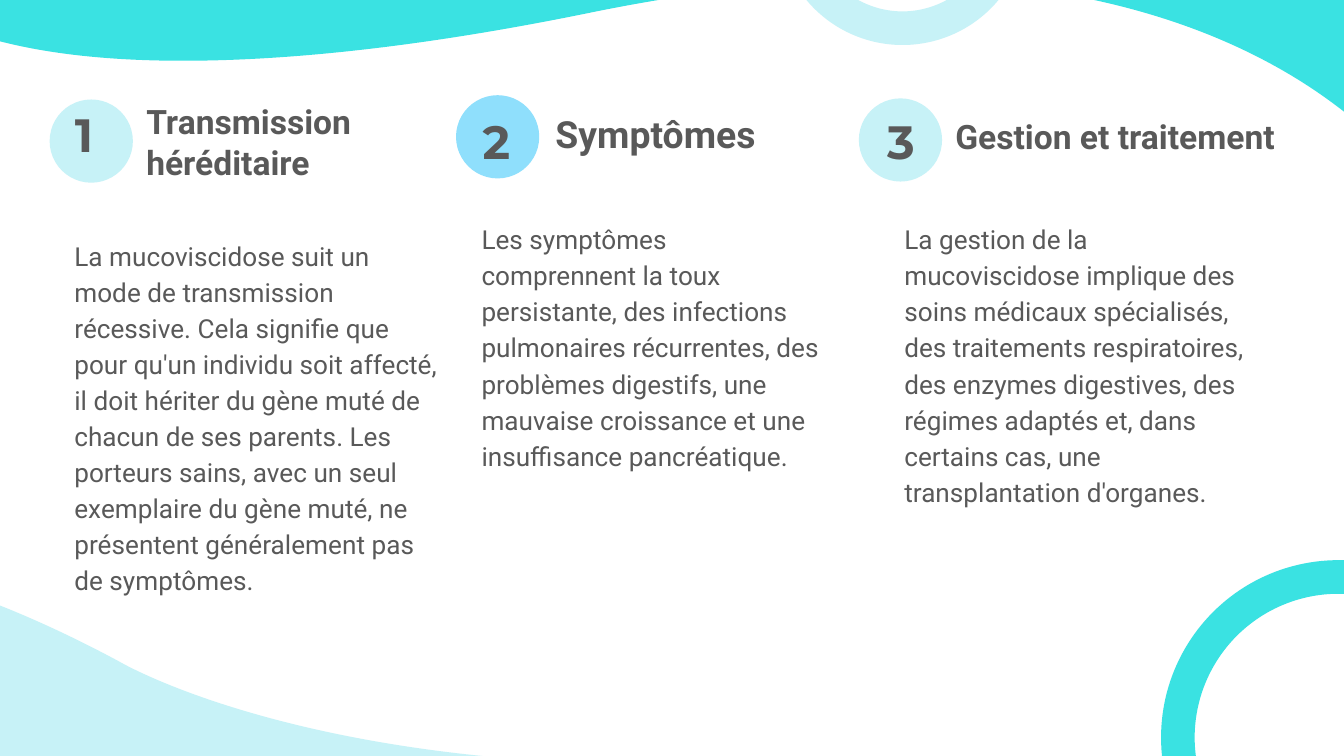
from lxml import etree
from pptx import Presentation
from pptx import util as u
from pptx.dml.color import RGBColor
from pptx.enum import shapes, text
from pptx.oxml.ns import qn

CYAN, PALE, BLUE, GRAY = "3AE2E2", "C7F2F7", "8FDFFC", "595959"


def color(value):
    return RGBColor.from_string(value)


class SlideBuilder:
    def __init__(self, slide):
        self.slide = slide

    def wave(self, start, segments, fill):
        outline = [(u.Pt(x), u.Pt(y)) for segment in segments for x, y in segment]
        builder = self.slide.shapes.build_freeform(u.Pt(start[0]), u.Pt(start[1]), scale=1.0)
        builder.add_line_segments(outline, close=True)
        shape = builder.convert_to_shape()
        lines = iter(list(shape.element.iter(qn("a:lnTo"))))
        for segment in segments:
            steps = [next(lines) for _ in segment]
            if len(steps) == 3:
                bezier = etree.Element(qn("a:cubicBezTo"))
                steps[0].addprevious(bezier)
                for step in steps:
                    bezier.append(step[0])
                    step.getparent().remove(step)
        shape.shadow.inherit = False
        shape.fill.solid()
        shape.fill.fore_color.rgb = color(fill)
        shape.line.fill.background()

    def circle(self, left, top, size, fill=None, line=None):
        shape = self.slide.shapes.add_shape(
            shapes.MSO_SHAPE.OVAL, u.Pt(left), u.Pt(top), u.Pt(size), u.Pt(size))
        shape.shadow.inherit = False
        if fill:
            shape.fill.solid()
            shape.fill.fore_color.rgb = color(fill)
        else:
            shape.fill.background()
        if line:
            shape.line.color.rgb = color(line)
            shape.line.width = u.Pt(18)
        else:
            shape.line.fill.background()

    def label(self, box, content, size, font="Roboto", bold=False, spacing=1.0):
        shape = self.slide.shapes.add_textbox(*(u.Pt(length) for length in box))
        frame = shape.text_frame
        frame.word_wrap = True
        frame.vertical_anchor = text.MSO_ANCHOR.TOP
        frame.margin_left = frame.margin_right = u.Pt(7.2)
        frame.margin_top = frame.margin_bottom = u.Pt(7.2)
        paragraph = frame.paragraphs[0]
        paragraph.line_spacing = spacing
        run = paragraph.add_run()
        run.text = content
        run.font.name = font
        run.font.size = u.Pt(size)
        run.font.bold = bold
        run.font.color.rgb = color(GRAY)


COLUMNS = [
    dict(circle=(26.6, 53.3), fill=PALE, number=(33.1, 49.7),
         title="Transmission héréditaire", title_size=18,
         title_box=(71.3, 47, 179.3, 28.8), body_box=(32.8, 119.1, 210, 95.8),
         body="La mucoviscidose suit un mode de transmission récessive. Cela signifie que "
              "pour qu'un individu soit affecté, il doit hériter du gène muté de chacun de "
              "ses parents. Les porteurs sains, avec un seul exemplaire du gène muté, ne "
              "présentent généralement pas de symptômes."),
    dict(circle=(244.3, 51), fill=BLUE, number=(251.5, 53.3),
         title="Symptômes", title_size=20,
         title_box=(290.5, 52.6, 179.3, 28.8), body_box=(250.9, 110.2, 198.7, 95.8),
         body="Les symptômes comprennent la toux persistante, des infections pulmonaires "
              "récurrentes, des problèmes digestifs, une mauvaise croissance et une "
              "insuffisance pancréatique."),
    dict(circle=(460.1, 52.7), fill=PALE, number=(468.2, 53.3),
         title="Gestion et traitement", title_size=18,
         title_box=(504.7, 54.7, 225.4, 60.5), body_box=(477.4, 110.2, 208, 103.7),
         body="La gestion de la mucoviscidose implique des soins médicaux spécialisés, des "
              "traitements respiratoires, des enzymes digestives, des régimes adaptés et, "
              "dans certains cas, une transplantation d'organes."),
]


def main():
    presentation = Presentation()
    presentation.slide_width, presentation.slide_height = u.Pt(720), u.Pt(405)
    builder = SlideBuilder(presentation.slides.add_slide(presentation.slide_layouts[6]))

    builder.wave((-154, 299.5), [
        [(-113, 293), (-42.5, 297.4), (63.4, 354.2)],
        [(63.4, 354.2), (129.6, 393.8), (269.3, 406.1)],
        [(-175, 473.8)],
        [(-198, 313.9)],
        [(-198, 313.9), (-183.6, 303.8), (-154, 299.5)],
    ], PALE)
    builder.wave((771.8, 118.1), [
        [(792.7, -43.2)],
        [(-72.7, -43.2)],
        [(-72.7, -26.6)],
        [(-72.7, -26.6), (-59.8, 32.6), (97.9, 32.6)],
        [(151.9, 32.6), (223.2, 25.9), (316.8, 6.7)],
        [(378, -5.8), (430.6, -10.8), (477.4, -10.8)],
        [(709.9, -10.8), (771.8, 118.1), (771.8, 118.1)],
    ], CYAN)
    builder.circle(425.5, -100.8, 115.9, line=PALE)
    builder.circle(631, 309.1, 172.1, line=CYAN)

    for number, column in enumerate(COLUMNS, 1):
        builder.circle(*column["circle"], 44.6, fill=column["fill"])
        builder.label((*column["number"], 31.7, 35.3), str(number), 25, "Montserrat", True)
        builder.label(column["title_box"], column["title"], column["title_size"], bold=True)
        builder.label(column["body_box"], column["body"], 14, spacing=1.15)

    presentation.save("out.pptx")


if __name__ == "__main__":
    main()
